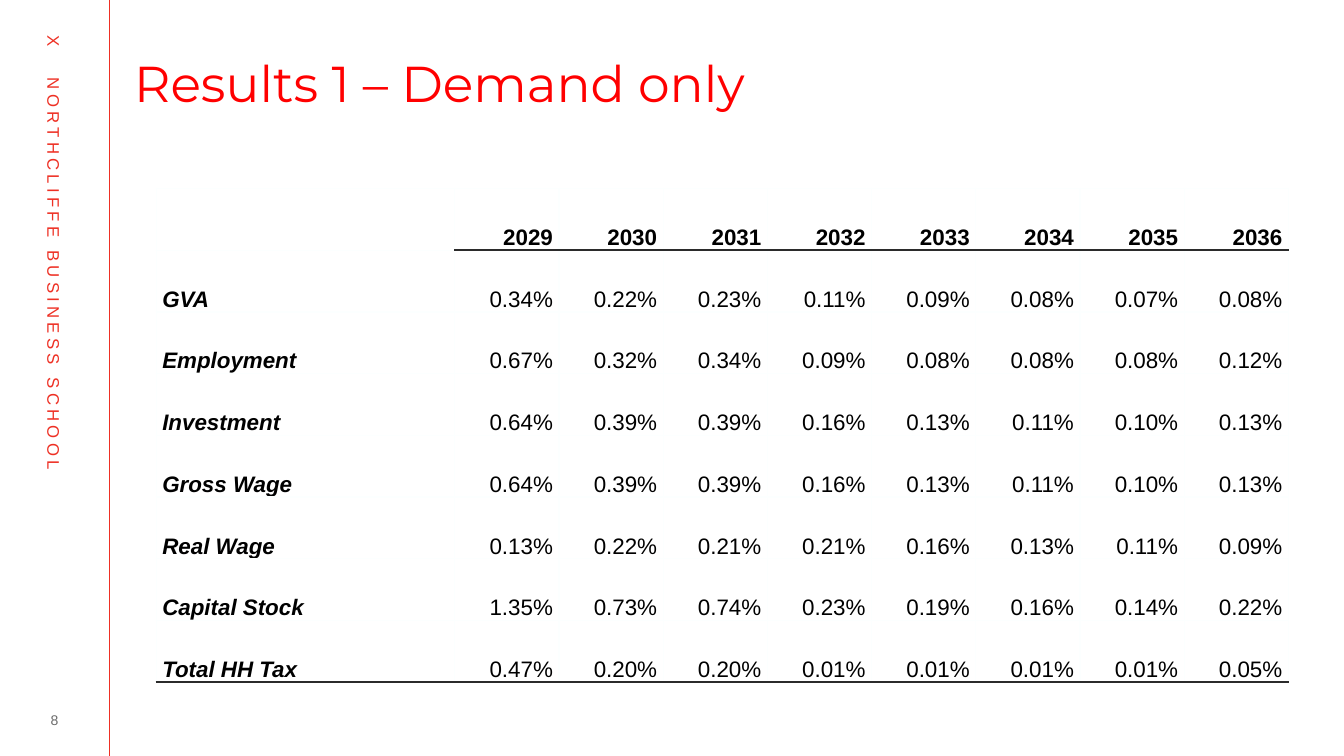
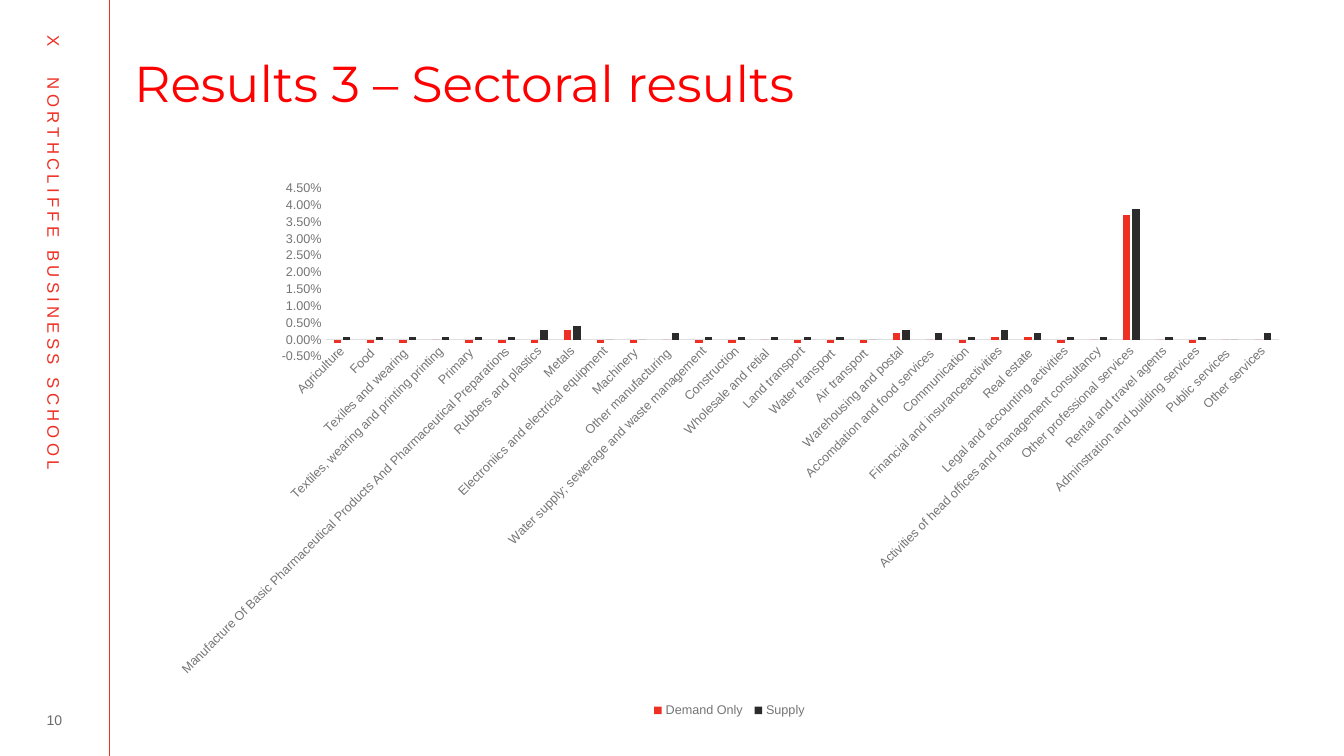
import pptx
import pptx.chart.data
import pptx.dml.color
import pptx.enum.chart
import pptx.enum.shapes
import pptx.enum.text
import pptx.oxml.ns
import pptx.oxml.xmlchemy
import pptx.util

Inches = pptx.util.Inches
Pt = pptx.util.Pt
ALIGN = pptx.enum.text.PP_ALIGN
ANCHOR = pptx.enum.text.MSO_ANCHOR

COLORS = {
    "title": "FF0000",
    "brand": "EE3024",
    "demand": "ED2F24",
    "dark": "2B2B2B",
    "number": "6B6B6B",
    "label": "757575",
    "axis": "DFDFDF",
    "text": "000000",
    "paper": "FFFFFF",
    "faint": "FCFFFF",
}

YEARS = [str(year) for year in range(2029, 2037)]
IMPACTS = {
    "GVA": "0.34% 0.22% 0.23% 0.11% 0.09% 0.08% 0.07% 0.08%",
    "Employment": "0.67% 0.32% 0.34% 0.09% 0.08% 0.08% 0.08% 0.12%",
    "Investment": "0.64% 0.39% 0.39% 0.16% 0.13% 0.11% 0.10% 0.13%",
    "Gross Wage": "0.64% 0.39% 0.39% 0.16% 0.13% 0.11% 0.10% 0.13%",
    "Real Wage": "0.13% 0.22% 0.21% 0.21% 0.16% 0.13% 0.11% 0.09%",
    "Capital Stock": "1.35% 0.73% 0.74% 0.23% 0.19% 0.16% 0.14% 0.22%",
    "Total HH Tax": "0.47% 0.20% 0.20% 0.01% 0.01% 0.01% 0.01% 0.05%",
}

# Sector, demand only, supply
SECTORS = [
    ("Agriculture", -0.001, 0.001),
    ("Food ", -0.001, 0.001),
    ("Texiles and wearing ", -0.001, 0.001),
    ("Textiles, wearing and printing printing", 0, 0.001),
    ("Primary ", -0.001, 0.001),
    ("Manufacture Of Basic Pharmaceutical Products And Pharmaceutical Preparations", -0.001, 0.001),
    ("Rubbers and plastics", -0.001, 0.003),
    ("Metals", 0.003, 0.004),
    ("Electroniics and electrical equipment", -0.001, 0),
    ("Machinery ", -0.001, 0),
    ("Other manufacturing ", 0, 0.002),
    ("Water supply; sewerage and waste management", -0.001, 0.001),
    ("Construction", -0.001, 0.001),
    ("Wholesale and retial ", 0, 0.001),
    ("Land transport", -0.001, 0.001),
    ("Water transport ", -0.001, 0.001),
    ("Air transport ", -0.001, 0),
    ("Warehousing and postal", 0.002, 0.003),
    ("Accomdation and food services ", 0, 0.002),
    ("Communication", -0.001, 0.001),
    ("Financial and insuranceactivities", 0.001, 0.003),
    ("Real estate ", 0.001, 0.002),
    ("Legal and accounting activities", -0.001, 0.001),
    ("Activities of head offices and management consultancy", 0, 0.001),
    ("Other professional services", 0.037, 0.039),
    ("Rental and travel agents", 0, 0.001),
    ("Adminstration and building services", -0.001, 0.001),
    ("Public services ", 0, 0),
    ("Other services", 0, 0.002),
]


def color(name):
    return pptx.dml.color.RGBColor.from_string(COLORS[name])


def add_xml(parent, tag, **attributes):
    child = pptx.oxml.xmlchemy.OxmlElement(tag)
    for key, value in attributes.items():
        child.set(key, str(value))
    parent.append(child)
    return child


def style_font(font, size, color_name, name="Arial"):
    font.name = name
    font.size = Pt(size)
    font.color.rgb = color(color_name)


def set_margins(target, left=0, top=0, right=0, bottom=0):
    target.margin_left, target.margin_top = Inches(left), Inches(top)
    target.margin_right, target.margin_bottom = Inches(right), Inches(bottom)


def add_text(slide, text, left, top, width, height, size, color_name):
    box = slide.shapes.add_textbox(Inches(left), Inches(top), Inches(width), Inches(height))
    box.text_frame.word_wrap = True
    para = box.text_frame.paragraphs[0]
    para.text = text
    style_font(para.runs[0].font, size, color_name)
    return box


def place_title(layout):
    title = layout.placeholders[0]
    title.left, title.top = Inches(1.33), Inches(0.42)
    title.width, title.height = Inches(10.67), Inches(0.81)


def add_side_band(slide):
    rule = slide.shapes.add_connector(
        pptx.enum.shapes.MSO_CONNECTOR.STRAIGHT, Inches(1.08), 0, Inches(1.08), Inches(7.5))
    rule.line.color.rgb = color("brand")
    rule.line.width = Pt(0.5)
    add_xml(rule.element.spPr, "a:effectLst")

    band = add_text(slide, "X\tNORTHCLIFFE BUSINESS SCHOOL", -2.3, 2.94, 5.67, 0.3, 12, "brand")
    band.rotation = 90
    para = band.text_frame.paragraphs[0]
    para.runs[0].font._element.set("spc", "300")
    tabs = add_xml(para._p.get_or_add_pPr(), "a:tabLst")
    add_xml(tabs, "a:tab", pos=Inches(0.42), algn="l")


def fill_frame(slide, title, number):
    """Write the side band, the title and the slide number."""
    add_side_band(slide)
    frame = slide.shapes.title.text_frame
    frame.text = title
    frame.auto_size = pptx.enum.text.MSO_AUTO_SIZE.NONE
    frame.vertical_anchor = ANCHOR.TOP
    set_margins(frame, top=0.21)
    para = frame.paragraphs[0]
    para.alignment = ALIGN.LEFT
    para.line_spacing = 0.8
    style_font(para.runs[0].font, 36, "title", "Montserrat")

    box = add_text(slide, number, 0.26, 7.02, 0.56, 0.25, 10, "number")
    set_margins(box.text_frame)
    box.text_frame.vertical_anchor = ANCHOR.MIDDLE
    box.text_frame.paragraphs[0].alignment = ALIGN.CENTER


def set_borders(cell, top, bottom):
    properties = cell._tc.get_or_add_tcPr()
    sides = {"a:lnL": "faint", "a:lnR": "faint", "a:lnT": top, "a:lnB": bottom}
    for index, (tag, color_name) in enumerate(sides.items()):
        line = add_xml(properties, tag, w=Pt(1.5 if color_name == "dark" else 1))
        add_xml(add_xml(line, "a:solidFill"), "a:srgbClr", val=COLORS[color_name])
        properties.insert(index, line)


def fill_cell(cell, text, bold, is_label):
    cell.fill.solid()
    cell.fill.fore_color.rgb = color("paper")
    cell.vertical_anchor = ANCHOR.BOTTOM
    set_margins(cell, left=0.06, right=0.06)
    if not text:
        return
    para = cell.text_frame.paragraphs[0]
    para.text = text
    para.alignment = ALIGN.LEFT if is_label else ALIGN.RIGHT
    para.line_spacing = 1.07
    para.space_after = Pt(8)
    font = para.runs[0].font
    style_font(font, 16, "text")
    font.bold, font.italic = bold, is_label


def add_impact_table(slide):
    rows = [["", *YEARS]] + [[name, *values.split()] for name, values in IMPACTS.items()]
    width, height, label_width = 11.23, 4.9, 2.96
    year_width = (width - label_width) / len(YEARS)
    table = slide.shapes.add_table(
        len(rows), len(rows[0]), Inches(1.55), Inches(1.87), Inches(width), Inches(height)).table
    table.first_row = table.horz_banding = False
    for index, column in enumerate(table.columns):
        column.width = Inches(year_width if index else label_width)

    last = len(rows) - 1
    for r, row in enumerate(rows):
        table.rows[r].height = Inches(height / len(rows))
        for c, text in enumerate(row):
            cell = table.cell(r, c)
            fill_cell(cell, text, bold=r == 0 or c == 0, is_label=c == 0)
            # Dark rules lie under the years and under the last row
            top = "dark" if r == 1 and c else "faint"
            bottom = "dark" if r == last or (r == 0 and c) else "faint"
            set_borders(cell, top, bottom)


def place_plot(chart, left, top, width, height):
    """Fix the inner plot area, given as fractions of the chart."""
    area = chart.element.xpath(".//c:plotArea")[0]
    for old in area.xpath("./c:layout"):
        area.remove(old)
    layout = add_xml(area, "c:layout")
    area.insert(0, layout)
    manual = add_xml(layout, "c:manualLayout")
    settings = {"layoutTarget": "inner", "xMode": "edge", "yMode": "edge",
                "x": left, "y": top, "w": width, "h": height}
    for name, value in settings.items():
        add_xml(manual, "c:" + name, val=value)


def add_sector_chart(slide):
    names, demand, supply = zip(*SECTORS)
    data = pptx.chart.data.CategoryChartData(number_format="0.00%")
    data.categories = names
    data.add_series("Demand Only ", demand)
    data.add_series("Supply", supply)
    width, height = 11.37, 5.4
    chart = slide.shapes.add_chart(
        pptx.enum.chart.XL_CHART_TYPE.COLUMN_CLUSTERED,
        Inches(1.55), Inches(1.76), Inches(width), Inches(height), data).chart
    style_font(chart.font, 10, "dark")
    chart.has_title = False
    place_plot(chart, 1.68 / width, 0.11 / height, 9.46 / width, 1.67 / height)

    # Columns
    plot = chart.plots[0]
    plot.gap_width, plot.overlap = 219, -27
    plot.vary_by_categories = False
    for series, color_name in zip(plot.series, ("demand", "dark")):
        series.invert_if_negative = False
        series.format.fill.solid()
        series.format.fill.fore_color.rgb = color(color_name)

    # Axes
    for axis in (chart.category_axis, chart.value_axis):
        axis.major_tick_mark = axis.minor_tick_mark = pptx.enum.chart.XL_TICK_MARK.NONE
        axis.has_major_gridlines = False
        style_font(axis.tick_labels.font, 9, "label")
    chart.category_axis.format.line.color.rgb = color("axis")
    chart.category_axis.format.line.width = Pt(0.75)
    chart.element.xpath(".//c:catAx/c:txPr/a:bodyPr")[0].set("rot", str(-45 * 60000))
    values = chart.value_axis
    values.format.line.fill.background()
    values.minimum_scale, values.maximum_scale, values.major_unit = -0.005, 0.045, 0.005
    values.tick_labels.number_format = "0.00%"
    values.tick_labels.number_format_is_linked = False

    # Legend
    chart.has_legend = True
    chart.legend.position = pptx.enum.chart.XL_LEGEND_POSITION.BOTTOM
    chart.legend.include_in_layout = False
    style_font(chart.legend.font, 9, "label")


def main():
    deck = pptx.Presentation()
    deck.slide_width, deck.slide_height = Inches(13.33), Inches(7.5)
    layout = deck.slide_layouts[5]
    place_title(layout)
    pages = [
        ("Results 1 – Demand only", "8", add_impact_table),
        ("Results 3 – Sectoral results", "10", add_sector_chart),
    ]
    for title, number, add_content in pages:
        slide = deck.slides.add_slide(layout)
        fill_frame(slide, title, number)
        add_content(slide)
    deck.save("out.pptx")


if __name__ == "__main__":
    main()
